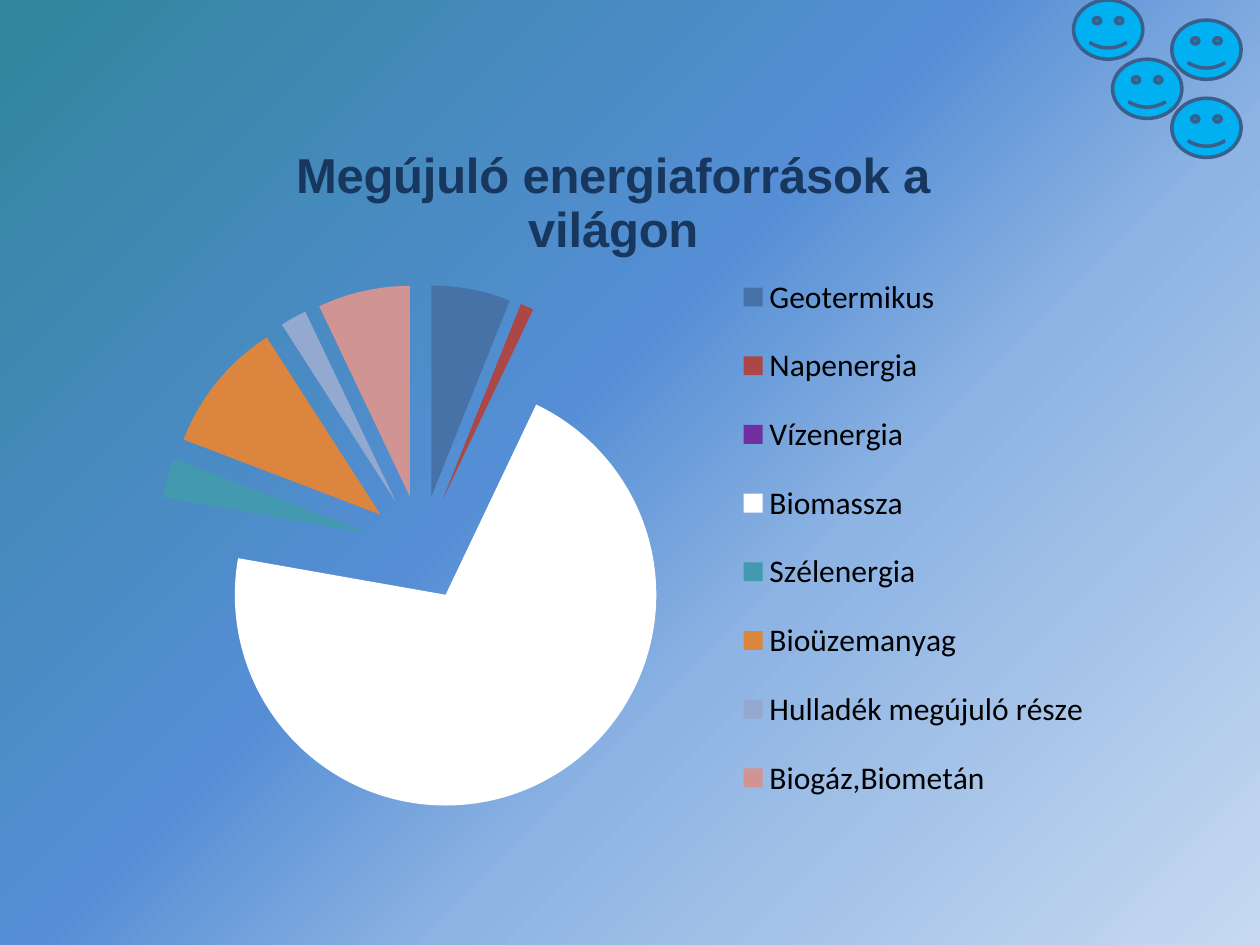
from typing import NamedTuple

from lxml import etree
from pptx import Presentation
from pptx.chart.data import CategoryChartData
from pptx.dml.color import RGBColor
from pptx.enum import chart as kinds, shapes
from pptx.oxml import ns
from pptx.util import Inches, Pt

HUES = {
    "sky": "00B0F0", "edge": "3A5F8C", "navy": "17375E", "black": "000000",
    "blue": "4672A8", "red": "AB4744", "purple": "7030A0", "white": "FFFFFF",
    "teal": "4299B0", "orange": "DC853E", "pale": "93A9D0", "pink": "D09493",
}
STOPS = {0: "31859C", 44: "558ED5", 63: "8EB4E3", 100: "C6D9F1"}
TITLE = "Megújuló energiaforrások a világon"


class Slice(NamedTuple):
    name: str
    value: int
    hue: str


class Face(NamedTuple):
    left: float
    top: float


SLICES = [
    Slice("Geotermikus", 6, "blue"),
    Slice("Napenergia", 1, "red"),
    Slice("Vízenergia", 0, "purple"),
    Slice("Biomassza", 70, "white"),
    Slice("Szélenergia", 3, "teal"),
    Slice("Bioüzemanyag", 10, "orange"),
    Slice("Hulladék megújuló része", 2, "pale"),
    Slice("Biogáz,Biometán", 7, "pink"),
]
FACES = [Face(9.3, 0.78), Face(8.52, 0), Face(8.83, 0.47), Face(9.3, 0.16)]


def tint(name: str) -> RGBColor:
    return RGBColor.from_string(HUES[name])


def add(root, tag: str, **attrs: str):
    return etree.SubElement(root, ns.qn(tag), attrs)


def style(font, *, size: float, hue: str, face: str, bold: bool = False) -> None:
    font.size, font.name, font.bold = Pt(size), face, bold
    font.color.rgb = tint(hue)


def write(frame, words: str, **form) -> None:
    run = frame.paragraphs[0].add_run()
    run.text = words
    style(run.font, **form)


def paint(slide) -> None:
    fill = slide.background.fill
    fill.gradient()
    grad = slide.element.find(".//" + ns.qn("a:gradFill"))
    for child in list(grad):
        grad.remove(child)
    stops = add(grad, "a:gsLst")
    for spot, hue in STOPS.items():
        add(add(stops, "a:gs", pos=str(spot * 1000)), "a:srgbClr", val=hue)
    add(grad, "a:lin", ang=str(45 * 60000), scaled="0")


def smile(slide, face: Face) -> None:
    shape = slide.shapes.add_shape(
        shapes.MSO_SHAPE.SMILEY_FACE,
        Inches(face.left), Inches(face.top), Inches(0.55), Inches(0.47))
    shape.shadow.inherit = False
    shape.fill.solid()
    shape.fill.fore_color.rgb = tint("sky")
    shape.line.color.rgb = tint("edge")
    shape.line.width = Pt(2)


def place(root, after: str, inner: bool, **box: float) -> None:
    for old in root.findall(ns.qn("c:layout")):
        root.remove(old)
    layout = etree.Element(ns.qn("c:layout"))
    spot = add(layout, "c:manualLayout")
    if inner:
        add(spot, "c:layoutTarget", val="inner")
    for mode in ("xMode", "yMode"):
        add(spot, "c:" + mode, val="edge")
    for key, value in box.items():
        add(spot, "c:" + key, val=str(value))
    if after:
        root.find(ns.qn(after)).addnext(layout)
    else:
        root.insert(0, layout)


def pie(slide) -> None:
    data = CategoryChartData(number_format="0")
    data.categories = [part.name for part in SLICES]
    data.add_series(TITLE, [part.value for part in SLICES])
    chart = slide.shapes.add_chart(
        kinds.XL_CHART_TYPE.PIE, Inches(0.86), Inches(1.02),
        Inches(7.89), Inches(5.55), data).chart
    style(chart.font, size=18, hue="black", face="Calibri")
    chart.has_title = True
    write(chart.chart_title.text_frame, TITLE,
          size=28, hue="navy", face="Arial", bold=True)
    chart.chart_title.include_in_layout = False
    chart.has_legend = True
    chart.legend.position = kinds.XL_LEGEND_POSITION.RIGHT
    chart.legend.include_in_layout = False
    plot = chart.plots[0]
    plot.vary_by_categories = True
    series = plot.series[0]
    burst = etree.Element(ns.qn("c:explosion"), val="25")
    series._element.find(ns.qn("c:tx")).addnext(burst)
    for i, part in enumerate(SLICES):
        fill = series.points[i].format.fill
        fill.solid()
        fill.fore_color.rgb = tint(part.hue)
    area = chart._chartSpace.find(".//" + ns.qn("c:plotArea"))
    place(area, "", True, x=0.05, y=0.22, w=0.53, h=0.76)
    place(chart.legend._element, "c:legendPos", False,
          x=0.63, y=0.17, w=0.36, h=0.83)
    place(chart.chart_title._element, "c:tx", False, x=0.18, y=0.01)


def main() -> None:
    deck = Presentation()
    deck.slide_width, deck.slide_height = Inches(10), Inches(7.5)
    slide = deck.slides.add_slide(deck.slide_layouts[6])
    paint(slide)
    for face in FACES:
        smile(slide, face)
    pie(slide)
    deck.save("out.pptx")


if __name__ == "__main__":
    main()
